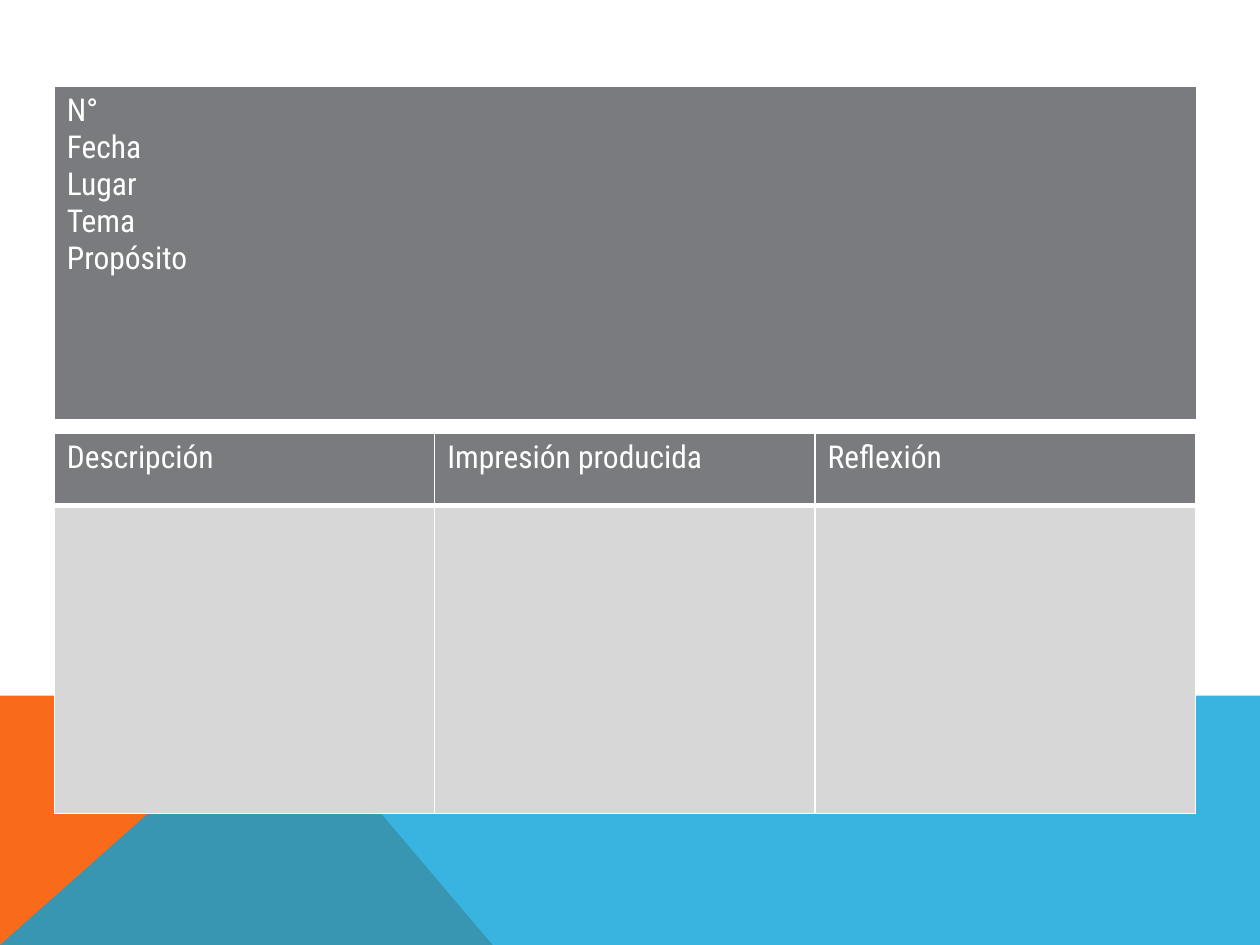
from lxml.etree import SubElement
from pptx import Presentation
from pptx.dml.color import RGBColor
from pptx.oxml.ns import qn
from pptx.util import Pt

WHITE = RGBColor(0xFF, 0xFF, 0xFF)
GRAY = RGBColor(0x79, 0x7B, 0x7E)
LIGHT_GRAY = RGBColor(0xD7, 0xD7, 0xD8)
ORANGE = RGBColor(0xF9, 0x6A, 0x1B)
BLUE = RGBColor(0x08, 0xA1, 0xD9)

WIDTH, HEIGHT = 720, 540
BAND_TOP = 397.5
LEFT = 31


class SlideBuilder:
    font = "Roboto Condensed"
    size = 18

    def __init__(self, slide):
        self.s = slide

    def polygon(self, points, color, opacity=100):
        points = [(Pt(x), Pt(y)) for x, y in points]
        fb = self.s.shapes.build_freeform(*points[0], scale=1.0)
        fb.add_line_segments(points[1:], close=True)
        sp = fb.convert_to_shape()
        sp.shadow.inherit = False
        sp.line.fill.background()
        sp.fill.solid()
        sp.fill.fore_color.rgb = color
        if opacity < 100:
            clr = sp.fill._xPr.find(f"{qn('a:solidFill')}/{qn('a:srgbClr')}")
            SubElement(clr, qn("a:alpha"), val=str(opacity * 1000))

    def table(self, top, col_width, row_heights, rows):
        """Each cell is a list of paragraphs; the first row is the header."""
        cols = len(rows[0])
        frame = self.s.shapes.add_table(
            len(rows), cols, Pt(LEFT), Pt(top),
            Pt(col_width * cols), Pt(sum(row_heights)))
        table = frame.table
        for col in table.columns:
            col.width = Pt(col_width)
        for i, (height, row) in enumerate(zip(row_heights, rows)):
            table.rows[i].height = Pt(height)
            for j, lines in enumerate(row):
                self.cell(table.cell(i, j), lines, header=i == 0)

    def cell(self, cell, lines, header):
        top, bottom = (1, 3) if header else (3, 1)
        for side, width in (("L", 1), ("R", 1), ("T", top), ("B", bottom)):
            self.border(cell, side, width)
        cell.fill.solid()
        cell.fill.fore_color.rgb = GRAY if header else LIGHT_GRAY
        tf = cell.text_frame
        for i, line in enumerate(lines):
            p = tf.add_paragraph() if i else tf.paragraphs[0]
            r = p.add_run()
            r.text = line
            r.font.name = self.font
            r.font.size = Pt(self.size)
            r.font.bold = False
            r.font.color.rgb = WHITE

    def border(self, cell, side, width):
        tcPr = cell._tc.get_or_add_tcPr()
        ln = SubElement(tcPr, qn(f"a:ln{side}"), w=str(Pt(width)))
        fill = SubElement(ln, qn("a:solidFill"))
        SubElement(fill, qn("a:srgbClr"), val=str(WHITE))


def main():
    prs = Presentation()
    prs.slide_width, prs.slide_height = Pt(WIDTH), Pt(HEIGHT)
    s = SlideBuilder(prs.slides.add_slide(prs.slide_layouts[6]))

    peak = (160.5, BAND_TOP)
    s.polygon([(0, HEIGHT), (0, BAND_TOP), peak, (281.5, HEIGHT)], ORANGE)
    s.polygon([(0, HEIGHT), peak, (WIDTH, BAND_TOP), (WIDTH, HEIGHT)],
              BLUE, opacity=80)

    s.table(49, 653, [192],
            [[["N°", "Fecha", "Lugar", "Tema", "Propósito"]]])
    s.table(247.5, 217.4, [41.5, 176],
            [[["Descripción"], ["Impresión producida"], ["Reflexión"]],
             [[], [], []]])

    prs.save("out.pptx")


if __name__ == "__main__":
    main()
